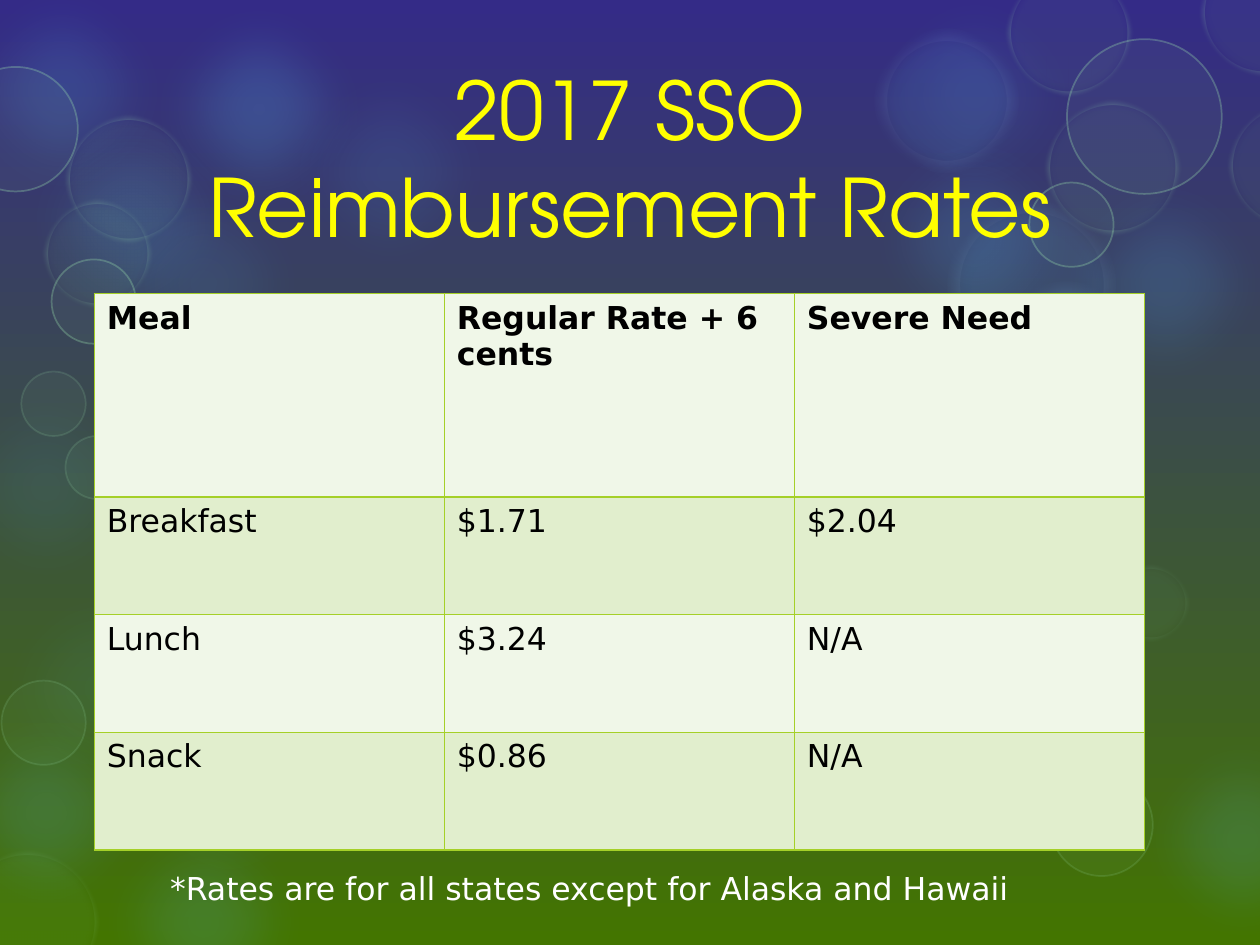
from lxml.etree import SubElement
from pptx import Presentation
from pptx.dml.color import RGBColor
from pptx.enum.shapes import MSO_SHAPE
from pptx.enum.text import MSO_ANCHOR, PP_ALIGN
from pptx.oxml.ns import qn
from pptx.util import Cm, Pt

WIDE, HIGH = 25.4, 19.05
BLUE, GREEN, PALE = "5BBAF6", "9DE3AE", "DDF1FD"
BODY = "DejaVu Sans"

# Circles by look: (fill, its opacity, line, its opacity, points, soft edge),
# then left, top, diameter of each
CIRCLES = [
    ((BLUE, 8, None, 0, 0, 1.1), [
        (-0.66, 11.23, 5.31), (1.96, 13.31, 5.31), (-1.74, 7.16, 5.31)]),
    ((BLUE, 10, None, 0, 0, 1.1), [
        (1.45, 3.05, 5.31), (5.21, 0.79, 5.31), (16.99, -0.74, 5.31),
        (17.15, 6.65, 3.38)]),
    ((BLUE, 15, None, 0, 0, 1.1), [
        (1.45, 15.93, 5.31), (-1.4, -0.83, 5.31), (0, 1.83, 5.31),
        (20.83, 3.05, 5.31), (22.38, 14.27, 5.31), (-1.73, 13.74, 5.31),
        (16.99, 2.18, 5.31)]),
    ((BLUE, 20, None, 0, 0, 1.1), [(2.57, -0.46, 5.31)]),
    ((BLUE, 10, PALE, 6, 14, 0.35), [
        (17.63, 0.58, 2.9), (19.1, 4.04, 3.38), (20.04, 5.69, 2.9)]),
    ((GREEN, 5, GREEN, 30, 5, 0.15), [
        (1.32, 2.34, 2.54), (0.89, 4.04, 2.16), (20.29, -0.61, 2.52),
        (24.21, -1.02, 2.54), (24.77, 2.08, 2.52), (21.08, 2.03, 2.69)]),
    ((GREEN, 5, GREEN, 15, 5, 0.15), [
        (-0.89, 17.15, 2.87), (22.43, 11.38, 1.55)]),
    ((GREEN, 5, GREEN, 30, 1, 0), [
        (-0.94, 1.35, 2.51), (1.04, 5.23, 1.7), (21.51, 0.79, 3.12),
        (20.75, 3.68, 1.7)]),
    ((GREEN, 5, GREEN, 15, 1, 0), [
        (0.03, 13.72, 1.7), (21.18, 15.6, 2.06), (0.43, 7.49, 1.3),
        (1.32, 8.79, 1.27)]),
]

RATES = [
    ("Meal", "Regular Rate + 6 cents", "Severe Need"),
    ("Breakfast", "$1.71", "$2.04"),
    ("Lunch", "$3.24", "N/A"),
    ("Snack", "$0.86", "N/A"),
]


def hue(code):
    return RGBColor.from_string(code)


def style(frame, font, size, code, bold=False):
    for para in frame.paragraphs:
        for run in para.runs:
            run.font.name = font
            run.font.size = Pt(size)
            run.font.bold = bold
            run.font.color.rgb = hue(code)


def bubble(slide, box, look):
    fill, clear, edge, faint, width, soft = look
    shape = slide.shapes.add_shape(MSO_SHAPE.OVAL, *map(Cm, box))
    shape.fill.solid()
    shape.fill.fore_color.rgb = hue(fill)
    if edge:
        shape.line.color.rgb = hue(edge)
        shape.line.width = Pt(width)
    else:
        shape.line.fill.background()
    shape.shadow.inherit = False

    # Opacity of fill and line, then the soft edge
    props = shape._element.spPr
    for tint, part in zip(props.iter(qn("a:srgbClr")), (clear, faint)):
        SubElement(tint, qn("a:alpha"), val=str(part * 1000))
    if soft:
        SubElement(props.find(qn("a:effectLst")), qn("a:softEdge"),
                   rad=str(Cm(soft)))


def backdrop(slide, box):
    x, y = box[:2]
    fill = slide.background.fill
    fill.gradient()
    fill.gradient_angle = 270
    for stop, code, spot in zip(fill.gradient_stops, ("342B87", "437500"), (0, 1)):
        stop.color.rgb = hue(code)
        stop.position = spot
    for look, places in CIRCLES:
        for left, top, size in places:
            bubble(slide, (x + left, y + top, size, size), look)


def label(slide, box, text, font, size, code, align, anchor):
    frame = slide.shapes.add_textbox(*map(Cm, box)).text_frame
    frame.word_wrap = True
    frame.vertical_anchor = anchor
    frame.text = text
    frame.paragraphs[0].alignment = align
    style(frame, font, size, code)


def border(cell, code):
    props = cell._tc.get_or_add_tcPr()
    for side in ("lnL", "lnR", "lnT", "lnB"):
        line = SubElement(props, qn(f"a:{side}"), w=str(Pt(1)))
        fill = SubElement(line, qn("a:solidFill"))
        SubElement(fill, qn("a:srgbClr"), val=code)


def grid(slide, box):
    x, y, wide, high = box
    head = 4.1
    table = slide.shapes.add_table(
        len(RATES), len(RATES[0]), Cm(x), Cm(y), Cm(wide), Cm(high)).table
    for col in table.columns:
        col.width = Cm(wide / len(RATES[0]))
    for r, row in enumerate(RATES):
        table.rows[r].height = Cm((high - head) / (len(RATES) - 1) if r else head)
        for c, text in enumerate(row):
            cell = table.cell(r, c)
            border(cell, "A5D028")
            cell.fill.solid()
            cell.fill.fore_color.rgb = hue("E1EECD" if r % 2 else "F0F7E8")
            cell.text_frame.text = text
            style(cell.text_frame, BODY, 18, "000000", bold=r == 0)


def main():
    deck = Presentation()
    deck.slide_width, deck.slide_height = Cm(WIDE), Cm(HIGH)
    slide = deck.slides.add_slide(deck.slide_layouts[6])

    backdrop(slide, (0, 0, WIDE, HIGH))
    # Title
    label(slide, (2.8, 1.88, 19.8, 2.57), "2017 SSO Reimbursement Rates",
          "TeX Gyre Adventor", 46, "FFFF00", PP_ALIGN.CENTER, MSO_ANCHOR.MIDDLE)
    # Rates
    grid(slide, (1.9, 5.92, 21.17, 11.22))
    # Footnote
    label(slide, (3.18, 17.4, 20.75, 1.02),
          "*Rates are for all states except for Alaska and Hawaii",
          BODY, 18, "FFFFFF", PP_ALIGN.LEFT, MSO_ANCHOR.TOP)
    deck.save("out.pptx")


if __name__ == "__main__":
    main()
